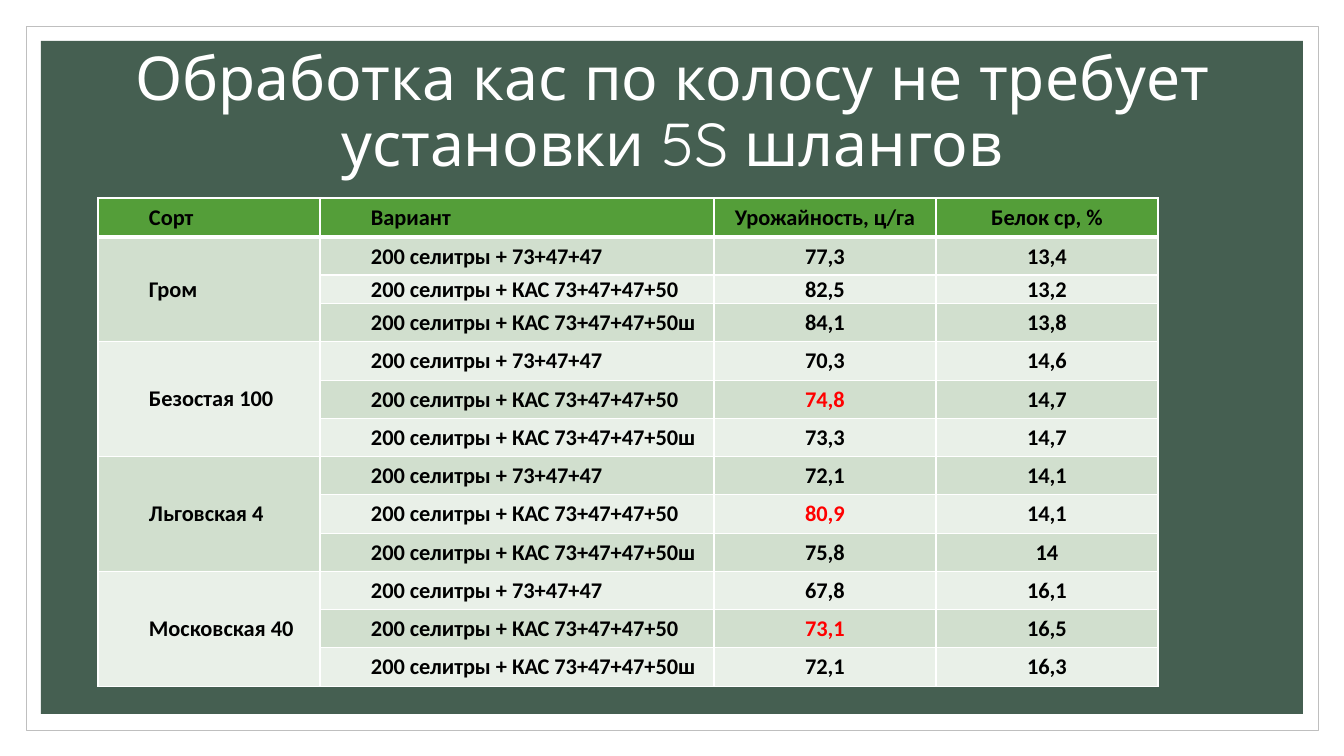
import pptx
import pptx.util
import pptx.dml.color
import pptx.enum.shapes
import pptx.enum.text
from lxml import etree

COLORS = {"white": "FFFFFF", "frame": "BFBFBF", "panel": "455F51",
          "header": "549E39", "band_dark": "D1DFCE", "band_light": "E9F0E8",
          "text": "000000", "best": "FF0000"}
TITLE = "Обработка кас по колосу не требует установки 5S шлангов"
HEADERS = ["Сорт", "Вариант", "Урожайность, ц/га", "Белок ср, %"]
VARIANTS = ["200 селитры + 73+47+47",
            "200 селитры + КАС 73+47+47+50",
            "200 селитры + КАС 73+47+47+50ш"]
# Yield and protein for each variant, in order
SORTS = {
    "Гром": [("77,3", "13,4"), ("82,5", "13,2"), ("84,1", "13,8")],
    "Безостая 100": [("70,3", "14,6"), ("74,8", "14,7"), ("73,3", "14,7")],
    "Льговская 4": [("72,1", "14,1"), ("80,9", "14,1"), ("75,8", "14")],
    "Московская 40": [("67,8", "16,1"), ("73,1", "16,5"), ("72,1", "16,3")],
}
BEST_YIELDS = {"74,8", "80,9", "73,1"}
COL_WIDTHS = [222, 394, 222, 222]
A = "http://schemas.openxmlformats.org/drawingml/2006/main"
ALIGN = pptx.enum.text.PP_ALIGN
MIDDLE = pptx.enum.text.MSO_ANCHOR.MIDDLE


def px(n):
    return pptx.util.Emu(round(n * 914400 / 100.8))


def rgb(name):
    return pptx.dml.color.RGBColor.from_string(COLORS[name])


class Deck:
    def __init__(self):
        self.prs = pptx.Presentation()
        self.prs.slide_width, self.prs.slide_height = px(1344), px(756)
        self.s = self.prs.slides.add_slide(self.prs.slide_layouts[5])

    def run(self, p, text, size, font, color, bold=False):
        r = p.add_run()
        r.text = text
        r.font.size, r.font.name, r.font.bold = pptx.util.Pt(size), font, bold
        r.font.color.rgb = rgb(color)

    def backdrop(self, x, y, w, h, fill, line=None):
        sp = self.s.shapes.add_shape(pptx.enum.shapes.MSO_SHAPE.RECTANGLE,
                                     px(x), px(y), px(w), px(h))
        sp.shadow.inherit = False
        sp.fill.solid()
        sp.fill.fore_color.rgb = rgb(fill)
        if line:
            sp.line.color.rgb = rgb(line)
            sp.line.width = pptx.util.Pt(0.5)
        else:
            sp.line.fill.background()
        # Keep the backdrop behind the title
        self.s.shapes.title.element.addprevious(sp.element)

    def title(self, x, y, w, h, text):
        sp = self.s.shapes.title
        sp.left, sp.top, sp.width, sp.height = px(x), px(y), px(w), px(h)
        tf = sp.text_frame
        tf.word_wrap, tf.vertical_anchor = True, MIDDLE
        tf.auto_size = pptx.enum.text.MSO_AUTO_SIZE.NONE
        p = tf.paragraphs[0]
        p.alignment, p.line_spacing = ALIGN.CENTER, 0.9
        self.run(p, text, 43.2, "Quicksand", "white")

    def table(self, x, y, col_widths, row_heights):
        tbl = self.s.shapes.add_table(
            len(row_heights), len(col_widths), px(x), px(y),
            px(sum(col_widths)), px(sum(row_heights))).table
        for col, w in zip(tbl.columns, col_widths):
            col.width = px(w)
        for row, h in zip(tbl.rows, row_heights):
            row.height = px(h)
        return tbl

    def borders(self, cell, top, bottom):
        tc_pr = cell._tc.get_or_add_tcPr()
        sides = {"lnL": 1, "lnR": 1, "lnT": top, "lnB": bottom}
        for i, (side, width) in enumerate(sides.items()):
            ln = etree.Element(f"{{{A}}}{side}", w=str(pptx.util.Pt(width)))
            fill = etree.SubElement(ln, f"{{{A}}}solidFill")
            etree.SubElement(fill, f"{{{A}}}srgbClr", val=COLORS["white"])
            tc_pr.insert(i, ln)

    def cell(self, cell, text, fill, centered, color="text", top=1, bottom=1):
        cell.fill.solid()
        cell.fill.fore_color.rgb = rgb(fill)
        self.borders(cell, top, bottom)
        cell.vertical_anchor = MIDDLE
        cell.margin_left = cell.margin_right = cell.margin_top = px(1)
        cell.margin_bottom = 0
        p = cell.text_frame.paragraphs[0]
        if centered:
            p.alignment = ALIGN.CENTER
        else:
            p.level = 1
            p_pr = p._p.get_or_add_pPr()
            p_pr.set("marL", str(px(50)))
            p_pr.set("indent", "0")
        if text:
            self.run(p, text, 16, "Calibri", color, bold=True)


def main():
    deck = Deck()

    # Frame, panel and title
    deck.backdrop(26, 26, 1292, 704, "white", "frame")
    deck.backdrop(41, 41, 1262, 673, "panel")
    deck.title(118, 71, 1109, 86, TITLE)

    # Table grid: one tight row, the others share the remaining height
    heights = [39 if i % 4 == 0 else 38 for i in range(13)]
    heights[2] = 26
    tbl = deck.table(98, 198, COL_WIDTHS, heights)

    # Header row
    for c, text in enumerate(HEADERS):
        deck.cell(tbl.cell(0, c), text, "header", c > 1, bottom=3)

    # Each sort spans its three variants
    n = len(VARIANTS)
    for g, (sort, results) in enumerate(SORTS.items()):
        first = 1 + g * n
        for i, (variant, (yield_, protein)) in enumerate(zip(VARIANTS, results)):
            r = first + i
            band = "band_dark" if r % 2 else "band_light"
            texts = [sort if i == 0 else "", variant, yield_, protein]
            for c, text in enumerate(texts):
                best = c == 2 and text in BEST_YIELDS
                deck.cell(tbl.cell(r, c), text, band, c > 1,
                          "best" if best else "text", top=3 if r == 1 else 1)
        tbl.cell(first, 0).merge(tbl.cell(first + n - 1, 0))

    deck.prs.save("out.pptx")


if __name__ == "__main__":
    main()
